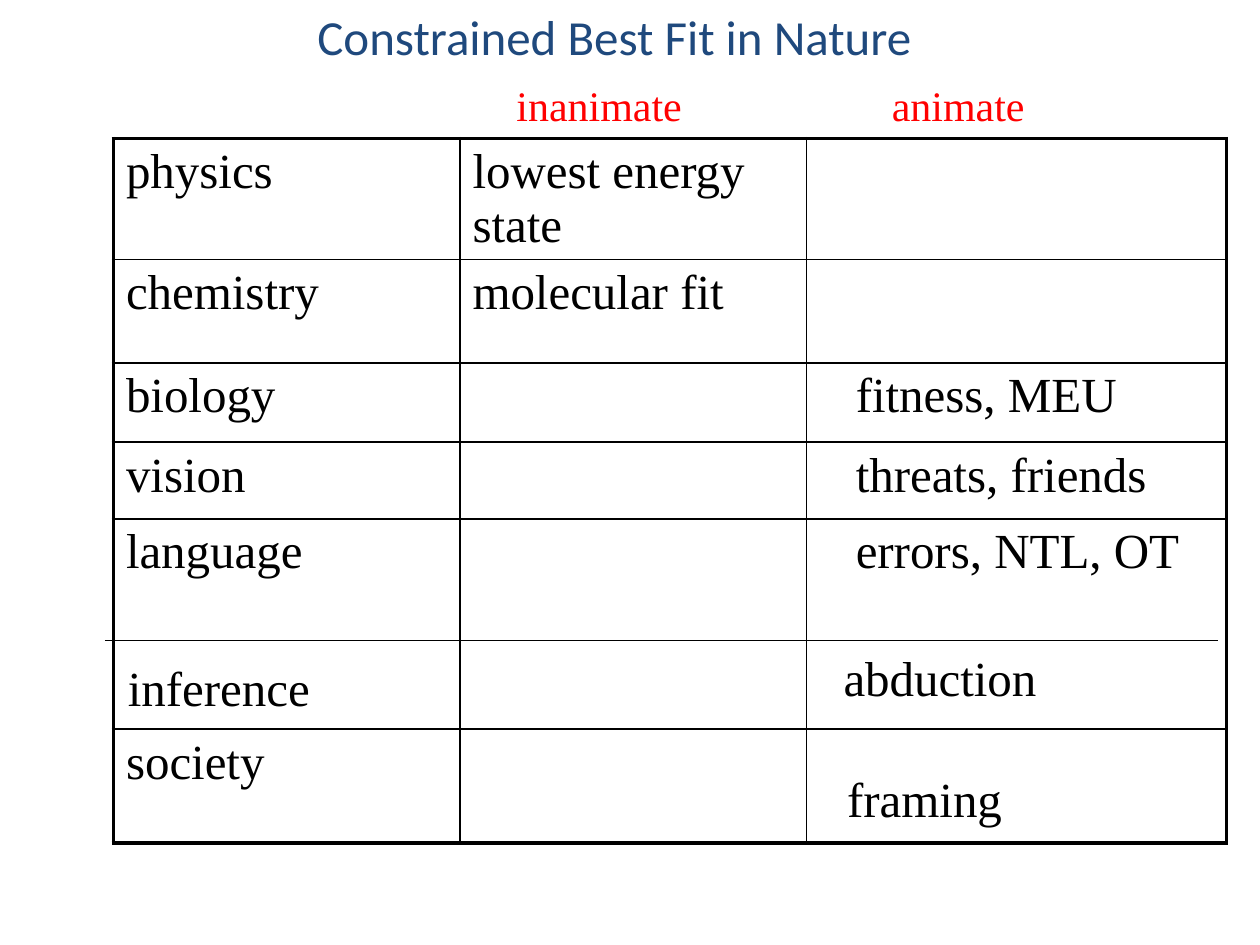
import pptx
import pptx.util
import pptx.dml.color
import pptx.enum.shapes
import pptx.enum.text
import pptx.oxml
import pptx.oxml.ns
import lxml.etree

Pt = pptx.util.Pt
BLACK = pptx.dml.color.RGBColor(0x00, 0x00, 0x00)
RED = pptx.dml.color.RGBColor(0xFF, 0x00, 0x00)
NAVY = pptx.dml.color.RGBColor(0x1F, 0x49, 0x7D)
SERIF = "Times New Roman"
SANS = "Calibri"

INDENT = 21
THIN, THICK = 1, 2.25
COLUMN_WIDTHS = [198, 198, 240]
ROW_HEIGHTS = [69, 59, 45.3, 43.8, 120.2, 65]

# Each row: domain, inanimate, animate
ROWS = [
    ["physics", "lowest energy state", ""],
    ["chemistry", "molecular fit", ""],
    ["biology", "", "fitness, MEU"],
    ["vision", "", "threats, friends"],
    ["language", "", "errors, NTL, OT"],
    ["society", "", ""],
]
LANGUAGE_ROW, ANIMATE_COLUMN = 4, 2


def add_run(paragraph, text, size=28, font=SERIF, color=BLACK):
    run = paragraph.add_run()
    run.text = text
    run.font.size = Pt(size)
    run.font.name = font
    run.font.color.rgb = color


def indent(paragraph, points):
    paragraph._p.get_or_add_pPr().set("marL", str(Pt(points)))


def add_tab_stop(paragraph, points):
    properties = paragraph._p.get_or_add_pPr()
    tabs = lxml.etree.SubElement(properties, pptx.oxml.ns.qn("a:tabLst"))
    tab = lxml.etree.SubElement(tabs, pptx.oxml.ns.qn("a:tab"))
    tab.set("pos", str(Pt(points)))
    tab.set("algn", "l")


def add_title(slide, text):
    title = slide.shapes.title
    title.left, title.top, title.width, title.height = Pt(60), Pt(0), Pt(582), Pt(41)
    frame = title.text_frame
    frame.word_wrap = True
    frame.auto_size = pptx.enum.text.MSO_AUTO_SIZE.NONE
    frame.vertical_anchor = pptx.enum.text.MSO_ANCHOR.TOP
    paragraph = frame.paragraphs[0]
    paragraph.alignment = pptx.enum.text.PP_ALIGN.CENTER
    add_run(paragraph, text, font=SANS, color=NAVY)


def add_text(slide, text, left, top, width, height, size=28, color=BLACK):
    frame = slide.shapes.add_textbox(Pt(left), Pt(top), Pt(width), Pt(height)).text_frame
    frame.word_wrap = True
    paragraph = frame.paragraphs[0]
    add_run(paragraph, text, size=size, color=color)
    return paragraph


def set_borders(cell, widths):
    properties = cell._tc.get_or_add_tcPr()
    for side, width in widths.items():
        properties.append(pptx.oxml.parse_xml(
            f'<a:ln{side} {pptx.oxml.ns.nsdecls("a")} w="{Pt(width)}">'
            f'<a:solidFill><a:srgbClr val="{BLACK}"/></a:solidFill></a:ln{side}>'))


def add_domain_table(slide):
    last_row, last_column = len(ROWS) - 1, len(COLUMN_WIDTHS) - 1
    table = slide.shapes.add_table(
        len(ROWS), len(COLUMN_WIDTHS), Pt(64.8), Pt(79.2),
        Pt(sum(COLUMN_WIDTHS)), Pt(sum(ROW_HEIGHTS))).table
    table.first_row = False
    table.horz_banding = False
    for column, width in zip(table.columns, COLUMN_WIDTHS):
        column.width = Pt(width)
    for row, height in zip(table.rows, ROW_HEIGHTS):
        row.height = Pt(height)

    for row_index, texts in enumerate(ROWS):
        for column_index, text in enumerate(texts):
            cell = table.cell(row_index, column_index)
            # Thick outer frame, thin inner grid
            set_borders(cell, {
                "L": THICK if column_index == 0 else THIN,
                "R": THICK if column_index == last_column else THIN,
                "T": THICK if row_index == 0 else THIN,
                "B": THICK if row_index == last_row else THIN,
            })
            cell.fill.background()
            if text:
                paragraph = cell.text_frame.paragraphs[0]
                if column_index == ANIMATE_COLUMN:
                    indent(paragraph, INDENT)
                add_run(paragraph, text)

    # Second entry of the language cell, below the inference line
    paragraph = table.cell(LANGUAGE_ROW, ANIMATE_COLUMN).text_frame.add_paragraph()
    indent(paragraph, 14)
    paragraph.space_before = Pt(42)
    add_run(paragraph, "abduction")


def add_line(slide, start_x, start_y, end_x, end_y):
    line = slide.shapes.add_connector(
        pptx.enum.shapes.MSO_CONNECTOR.STRAIGHT,
        Pt(start_x), Pt(start_y), Pt(end_x), Pt(end_y))
    line.line.color.rgb = BLACK
    line.line.width = Pt(0.75)
    lxml.etree.SubElement(line._element.spPr, pptx.oxml.ns.qn("a:effectLst"))


def main():
    presentation = pptx.Presentation()
    presentation.slide_width = Pt(720)
    presentation.slide_height = Pt(540)
    slide = presentation.slides.add_slide(presentation.slide_layouts[5])

    add_domain_table(slide)
    add_title(slide, "Constrained Best Fit in Nature")

    # Column headings
    headings = add_text(slide, "inanimate\tanimate", 288, 42, 336, 36, size=24, color=RED)
    add_tab_stop(headings, 214.5)

    # Inference row drawn over the table
    add_line(slide, 60, 366, 696, 366)
    add_text(slide, "inference", 66, 372, 162, 41)

    # Animate entry for society
    framing = add_text(slide, "framing", 456, 435.6, 234, 41)
    indent(framing, INDENT)

    presentation.save("out.pptx")


if __name__ == "__main__":
    main()
